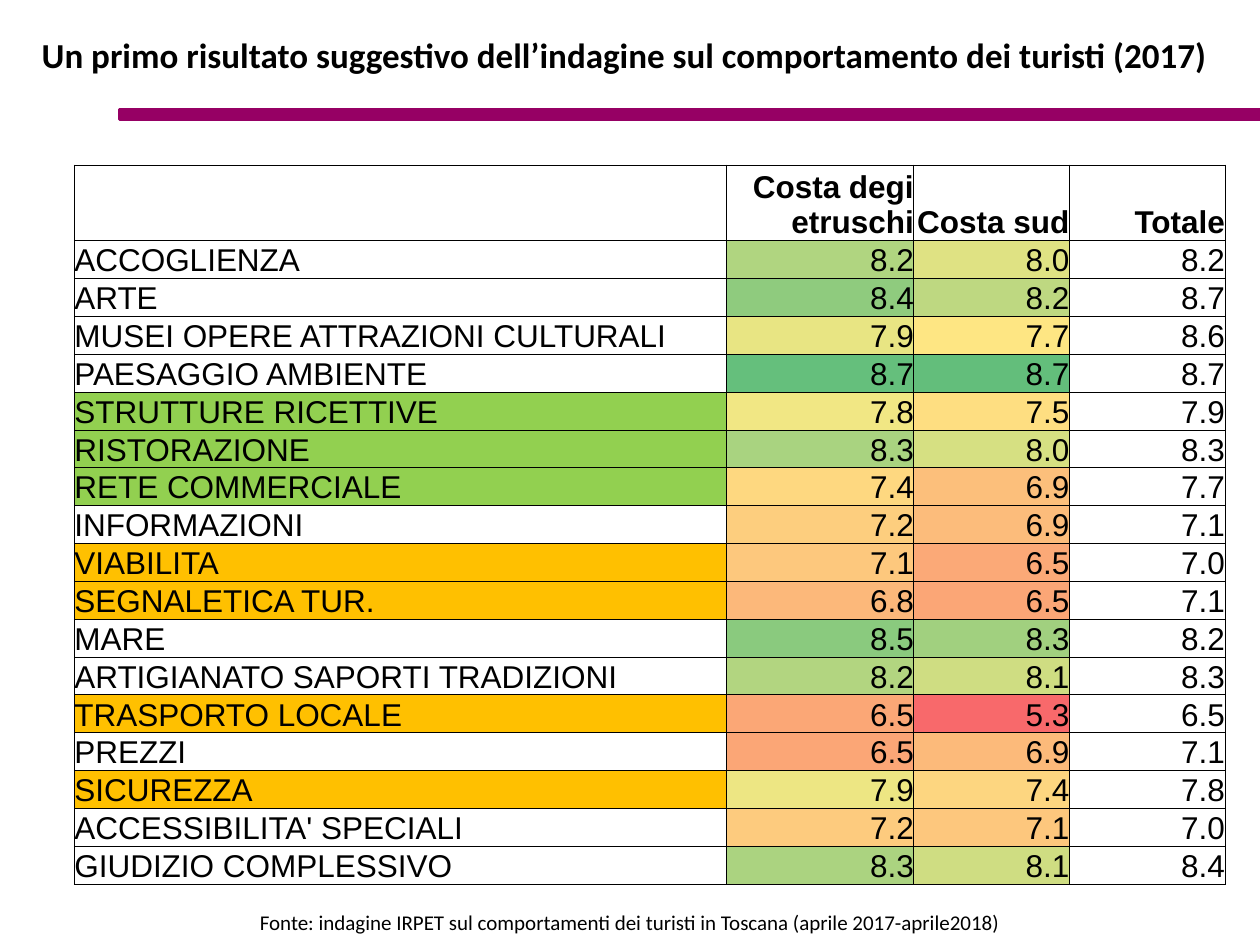
import pptx
import pptx.dml.color
import pptx.enum.shapes
import pptx.enum.text
import pptx.oxml
import pptx.oxml.ns
import pptx.util

Pt = pptx.util.Pt
ALIGN = pptx.enum.text.PP_ALIGN
ANCHOR = pptx.enum.text.MSO_ANCHOR

BLACK, PURPLE, GREEN, AMBER = "000000", "960064", "92D050", "FFC000"
COLUMN_WIDTHS = (372.4, 107.3, 88.9, 88.9)
HEADINGS = ("", "Costa degi etruschi", "Costa sud", "Totale")
RATINGS = [
    ("ACCOGLIENZA", None, "8.2", "B0D580", "8.0", "DFE283", "8.2"),
    ("ARTE", None, "8.4", "8FCB7E", "8.2", "BED881", "8.7"),
    ("MUSEI OPERE ATTRAZIONI CULTURALI", None, "7.9", "E8E583", "7.7", "FEE683", "8.6"),
    ("PAESAGGIO AMBIENTE", None, "8.7", "65BF7C", "8.7", "63BE7B", "8.7"),
    ("STRUTTURE RICETTIVE", GREEN, "7.8", "F1E784", "7.5", "FEDE81", "7.9"),
    ("RISTORAZIONE", GREEN, "8.3", "A9D380", "8.0", "D6E082", "8.3"),
    ("RETE COMMERCIALE", GREEN, "7.4", "FED880", "6.9", "FCBF7B", "7.7"),
    ("INFORMAZIONI", None, "7.2", "FDCE7E", "6.9", "FCBC7B", "7.1"),
    ("VIABILITA", AMBER, "7.1", "FDC87D", "6.5", "FBA977", "7.0"),
    ("SEGNALETICA TUR.", AMBER, "6.8", "FCB87A", "6.5", "FBA676", "7.1"),
    ("MARE", None, "8.5", "8ACA7E", "8.3", "A1D07F", "8.2"),
    ("ARTIGIANATO SAPORTI TRADIZIONI", None, "8.2", "B2D580", "8.1", "CFDD82", "8.3"),
    ("TRASPORTO LOCALE", AMBER, "6.5", "FBA776", "5.3", "F8696B", "6.5"),
    ("PREZZI", None, "6.5", "FBA676", "6.9", "FCBA7A", "7.1"),
    ("SICUREZZA", AMBER, "7.9", "EDE683", "7.4", "FDD680", "7.8"),
    ("ACCESSIBILITA' SPECIALI", None, "7.2", "FDCB7E", "7.1", "FDC77D", "7.0"),
    ("GIUDIZIO COMPLESSIVO", None, "8.3", "ABD380", "8.1", "CFDD82", "8.4"),
]


def paint(colour_format, hex_colour):
    colour_format.rgb = pptx.dml.color.RGBColor.from_string(hex_colour)


def write(frame, text, font, size, align, bold=False):
    paragraph = frame.paragraphs[0]
    paragraph.alignment = align
    run = paragraph.add_run()
    run.text = text
    run.font.name = font
    run.font.size = Pt(size)
    run.font.bold = bold
    paint(run.font.color, BLACK)


def add_heading(slide, left, top, width, height):
    title = slide.shapes.title
    title.left, title.top, title.width, title.height = map(Pt, (left, top, width, height))
    frame = title.text_frame
    frame.vertical_anchor = ANCHOR.TOP
    frame.auto_size = pptx.enum.text.MSO_AUTO_SIZE.NONE
    write(frame, "Un primo risultato suggestivo dell’indagine sul comportamento dei turisti (2017)",
          "Calibri", 20, ALIGN.LEFT, bold=True)


def add_rule(slide, left, top, width, height):
    rule = slide.shapes.add_shape(pptx.enum.shapes.MSO_SHAPE.RECTANGLE,
                                  *map(Pt, (left, top, width, height)))
    rule.shadow.inherit = False
    rule.fill.solid()
    paint(rule.fill.fore_color, PURPLE)
    paint(rule.line.color, PURPLE)
    rule.line.width = Pt(2)


def add_borders(cell):
    properties = cell._tc.get_or_add_tcPr()
    for side in ("lnL", "lnR", "lnT", "lnB"):
        properties.append(pptx.oxml.parse_xml(
            f'<a:{side} {pptx.oxml.ns.nsdecls("a")} w="{Pt(0.5)}"><a:solidFill>'
            f'<a:srgbClr val="{BLACK}"/></a:solidFill></a:{side}>'))


def fill_cell(cell, text, fill, align, bold):
    cell.margin_left = cell.margin_right = cell.margin_top = cell.margin_bottom = 0
    cell.vertical_anchor = ANCHOR.BOTTOM
    add_borders(cell)
    if fill:
        cell.fill.solid()
        paint(cell.fill.fore_color, fill)
    else:
        cell.fill.background()
    if text:
        write(cell.text_frame, text, "Arial", 18, align, bold)


def add_ratings(slide, left, top, width, height):
    rows = [[(heading, None) for heading in HEADINGS]]
    for topic, topic_fill, etruschi, etruschi_fill, sud, sud_fill, total in RATINGS:
        rows.append([(topic, topic_fill), (etruschi, etruschi_fill),
                     (sud, sud_fill), (total, None)])
    ratings = slide.shapes.add_table(len(rows), len(HEADINGS),
                                     *map(Pt, (left, top, width, height))).table
    ratings.first_row = ratings.horz_banding = False
    for column, share in zip(ratings.columns, COLUMN_WIDTHS):
        column.width = Pt(width * share / sum(COLUMN_WIDTHS))
    row_height = height / (len(rows) + 1)
    for r, entries in enumerate(rows):
        ratings.rows[r].height = Pt(row_height if r else 2 * row_height)
        for c, (text, fill) in enumerate(entries):
            fill_cell(ratings.cell(r, c), text, fill,
                      ALIGN.RIGHT if c else ALIGN.LEFT, bold=r == 0)


def add_source_note(slide, left, top, width, height):
    frame = slide.shapes.add_textbox(*map(Pt, (left, top, width, height))).text_frame
    frame.word_wrap = True
    write(frame, "Fonte: indagine IRPET sul comportamenti dei turisti in Toscana (aprile 2017-aprile2018)",
          "Calibri", 12, ALIGN.CENTER)


def main():
    deck = pptx.Presentation()
    deck.slide_width, deck.slide_height = Pt(720), Pt(540)
    slide = deck.slides.add_slide(deck.slide_layouts[5])
    add_rule(slide, 68.4, 62.6, 651.6, 5.8)
    add_heading(slide, 16.6, 15.8, 703.4, 31.7)
    add_source_note(slide, 0, 516.2, 720, 21.6)
    add_ratings(slide, 42.5, 94.3, 657.5, 410.4)
    deck.save("out.pptx")


if __name__ == "__main__":
    main()
